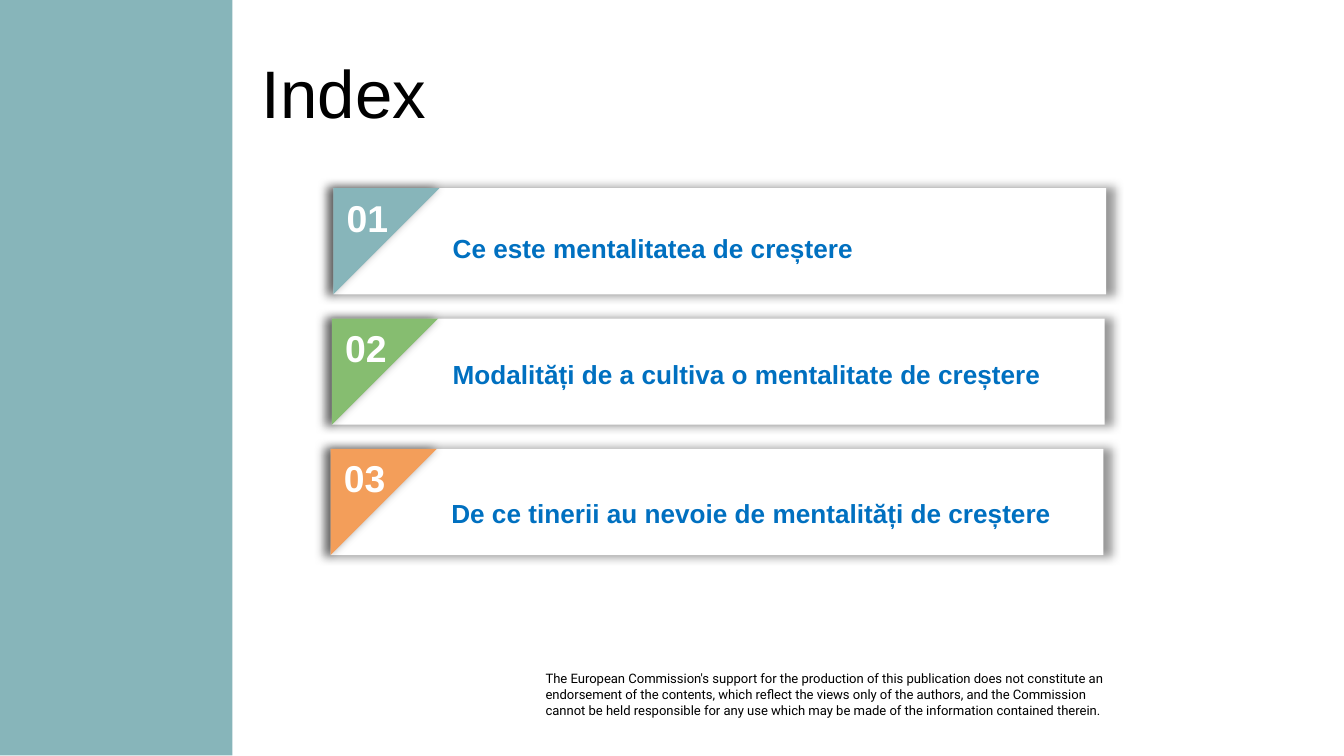
from lxml.etree import SubElement
from pptx import Presentation
from pptx.dml.color import RGBColor
from pptx.enum.shapes import MSO_SHAPE
from pptx.enum.text import MSO_ANCHOR, MSO_AUTO_SIZE
from pptx.oxml.ns import qn
from pptx.util import Inches, Pt


def rgb(hex_code):
    return RGBColor.from_string(hex_code)


class IndexSlide:
    """Draws styled elements on the current slide."""

    TEAL, GREEN, ORANGE = "87B5BA", "86BD70", "F39E5A"
    WHITE, BLACK, BLUE = "FFFFFF", "000000", "0070C0"

    def __init__(self, deck):
        self.slide = deck.slides.add_slide(deck.slide_layouts[6])

    def panel(self, shapes, kind, box, color, rotation=0):
        panel = shapes.add_shape(kind, *map(Inches, box))
        panel.shadow.inherit = False
        panel.fill.solid()
        panel.fill.fore_color.rgb = rgb(color)
        panel.line.fill.background()
        panel.rotation = rotation
        return panel

    def glow(self, panel):
        effects = panel._element.spPr.find(qn("a:effectLst"))
        shadow = SubElement(effects, qn("a:outerShdw"), blurRad=str(Pt(5)),
                            sx="102000", sy="102000", algn="ctr", rotWithShape="0")
        black = SubElement(shadow, qn("a:srgbClr"), val=self.BLACK)
        SubElement(black, qn("a:alpha"), val="40000")

    def text(self, box, paragraphs, size, color, font="Arial", bold=False,
             insets=(0.1, 0.05), anchor=MSO_ANCHOR.TOP, fit=MSO_AUTO_SIZE.SHAPE_TO_FIT_TEXT):
        frame = self.slide.shapes.add_textbox(*map(Inches, box)).text_frame
        frame.word_wrap = True
        frame.auto_size = fit
        frame.vertical_anchor = anchor
        frame.margin_left = frame.margin_right = Inches(insets[0])
        frame.margin_top = frame.margin_bottom = Inches(insets[1])
        for index, wording in enumerate(paragraphs):
            paragraph = frame.add_paragraph() if index else frame.paragraphs[0]
            run = paragraph.add_run()
            run.text = wording
            run.font.name = font
            run.font.size = Pt(size)
            run.font.bold = bold
            run.font.color.rgb = rgb(color)

    def card(self, left, top, color):
        group = self.slide.shapes.add_group_shape()
        self.glow(self.panel(group.shapes, MSO_SHAPE.RECTANGLE, (left, top, 5.75, 0.79), self.WHITE))
        self.glow(self.panel(group.shapes, MSO_SHAPE.RIGHT_TRIANGLE,
                             (left, top, 0.79, 0.79), color, 90))

    def number(self, value, left, top):
        self.text((left, top, 0.58, 0.44), [f"{value:02}"], 20, self.WHITE, bold=True)

    def topic(self, wording, left, top):
        self.text((left, top, 4.8, 0.34), [wording], 14, self.BLUE, bold=True)


def main():
    deck = Presentation()
    deck.slide_width = Inches(10)
    deck.slide_height = deck.slide_width * 9 // 16
    index = IndexSlide(deck)

    disclaimer = [
        "The European Commission's support for the production of this publication does not "
        "constitute an endorsement of the contents, which reflect the views only of the "
        "authors, and the Commission",
        "cannot be held responsible for any use which may be made of the information "
        "contained therein.",
    ]
    index.text((4.06, 4.99, 4.17, 0.35), disclaimer, 7, index.BLACK, "Roboto", insets=(0, 0))
    index.panel(index.slide.shapes, MSO_SHAPE.RECTANGLE, (0, 0, 1.73, 5.62), index.TEAL)
    index.text((1.85, 0.37, 7.2, 0.63), ["Index"], 36, index.BLACK,
               anchor=MSO_ANCHOR.MIDDLE, fit=MSO_AUTO_SIZE.NONE)

    topics = [
        ("Ce este mentalitatea de creștere", 3.27, 1.68),
        ("Modalități de a cultiva o mentalitate de creștere", 3.27, 2.62),
        ("De ce tinerii au nevoie de mentalități de creștere", 3.26, 3.65),
    ]
    corners = [(2.48 - 0.01 * row, 1.4 + 0.97 * row) for row in range(len(topics))]
    for corner, color in zip(corners, (index.TEAL, index.GREEN, index.ORANGE)):
        index.card(*corner, color)
    for value, corner in enumerate(corners, start=1):
        index.number(value, *corner)
    for topic in topics:
        index.topic(*topic)

    deck.save("out.pptx")


if __name__ == "__main__":
    main()
